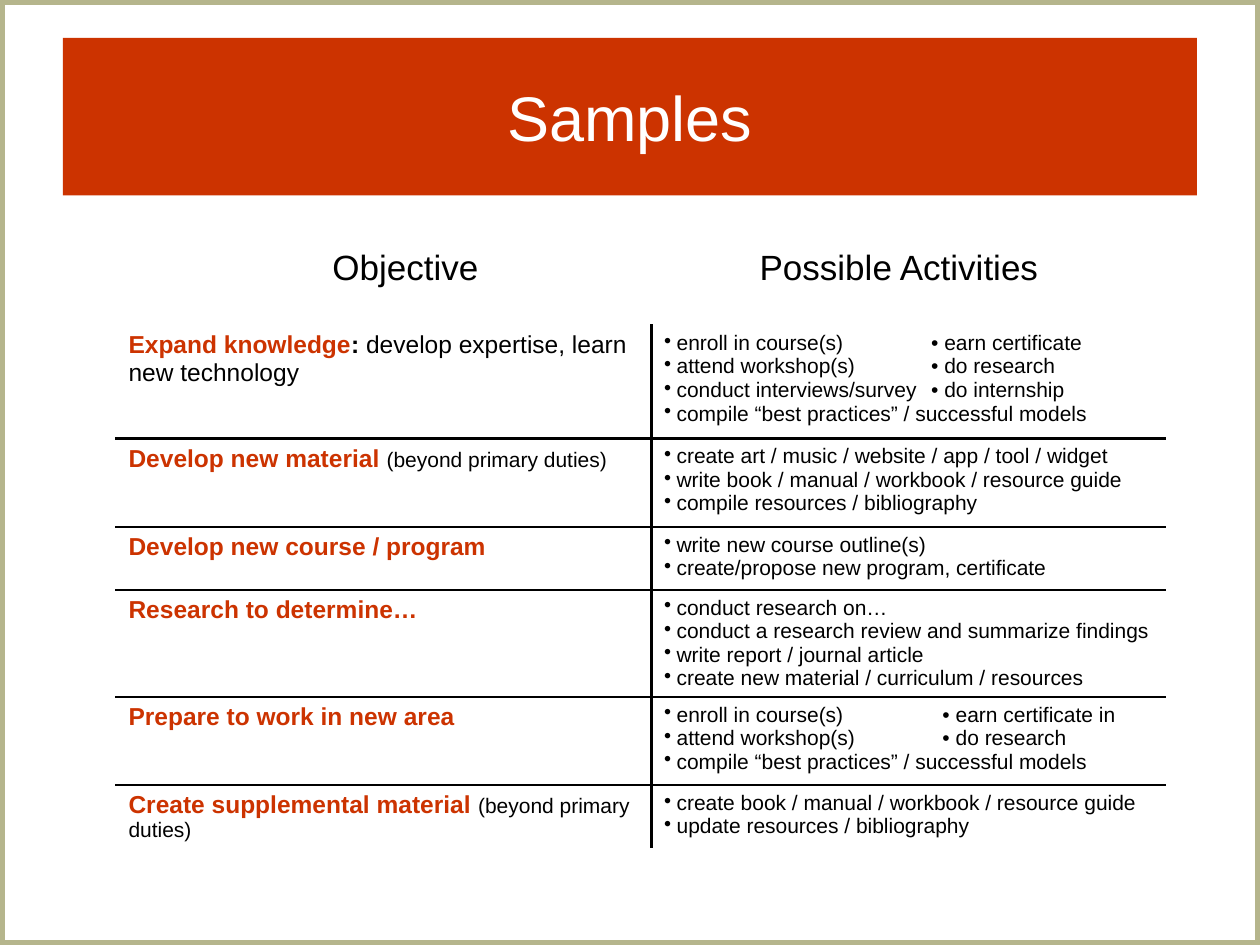
from dataclasses import dataclass

from lxml.etree import SubElement
from pptx import Presentation
from pptx.dml.color import RGBColor
from pptx.enum.shapes import MSO_SHAPE
from pptx.enum.text import MSO_ANCHOR, PP_ALIGN
from pptx.oxml.ns import qn
from pptx.util import Inches, Pt


@dataclass(frozen=True)
class Theme:
    """Colours, font and type sizes of the slide."""
    red: str = "CC3300"
    black: str = "000000"
    white: str = "FFFFFF"
    olive: str = "B5B58C"
    font: str = "Arial"
    title: int = 36
    head: int = 20
    goal: int = 14
    small: int = 12
    rule: float = 1.5
    frame: int = 6


LOOK = Theme()
BOLD = {"size": LOOK.goal, "color": LOOK.red, "bold": True}
DARK = {**BOLD, "color": LOOK.black}
BODY = {"size": LOOK.goal}
NOTE = {"size": LOOK.small}

ROWS = [
    (0.9, 2.12,
     [("Expand knowledge", BOLD), (": ", DARK),
      ("develop expertise, learn new technology", BODY)],
     ["enroll in course(s)\t• earn certificate",
      "attend workshop(s)\t• do research",
      "conduct interviews/survey\t• do internship",
      "compile “best practices” / successful models"]),
    (0.7, None,
     [("Develop new material ", BOLD), ("(beyond primary duties)", NOTE)],
     ["create art / music / website / app / tool / widget",
      "write book / manual / workbook / resource guide",
      "compile resources / bibliography"]),
    (0.5, None,
     [("Develop new course / program", BOLD)],
     ["write new course outline(s)",
      "create/propose new program, certificate"]),
    (0.85, None,
     [("Research to determine…", BOLD)],
     ["conduct research on…",
      "conduct a research review and summarize findings",
      "write report / journal article",
      "create new material / curriculum / resources"]),
    (0.7, 2.21,
     [("Prepare to work in new area", BOLD)],
     ["enroll in course(s)\t• earn certificate in",
      "attend workshop(s)\t• do research",
      "compile “best practices” / successful models"]),
    (0.5, None,
     [("Create supplemental material ", BOLD),
      ("(beyond primary duties)", NOTE)],
     ["create book / manual / workbook / resource guide",
      "update resources / bibliography"]),
]


def write(para, text, size, color=LOOK.black, bold=False):
    """Add a styled run to a paragraph."""
    run = para.add_run()
    run.text = text
    run.font.color.rgb = RGBColor.from_string(color)
    form = {"name": LOOK.font, "size": Pt(size), "bold": bold}
    for key, value in form.items():
        setattr(run.font, key, value)


def set_tabs(para, stops):
    """Give a paragraph left tab stops, in inches."""
    tabs = SubElement(para._p.get_or_add_pPr(), qn("a:tabLst"))
    for stop in stops:
        SubElement(tabs, qn("a:tab"), pos=str(Inches(stop)), algn="l")


def set_bullet(para, indent):
    """Give a paragraph a hanging round bullet."""
    props = para._p.get_or_add_pPr()
    props.set("marL", str(Inches(indent)))
    props.set("indent", str(-Inches(indent)))
    SubElement(props, qn("a:buChar"), char="•")


def rule_cell(cell, sides):
    """Draw rules on the given sides of a cell and clear its fill."""
    props = cell._tc.get_or_add_tcPr()
    for side in sides:
        line = SubElement(props, qn("a:ln" + side), w=str(Pt(LOOK.rule)))
        fill = SubElement(line, qn("a:solidFill"))
        SubElement(fill, qn("a:srgbClr"), val=LOOK.black)
    cell.fill.background()


def add_box(slide, box):
    """Add a plain rectangle without shadow."""
    shape = slide.shapes.add_shape(MSO_SHAPE.RECTANGLE, *map(Inches, box))
    shape.shadow.inherit = False
    return shape


def add_frame(slide, box):
    """Outline the slide."""
    frame = add_box(slide, box)
    frame.fill.background()
    frame.line.color.rgb = RGBColor.from_string(LOOK.olive)
    frame.line.width = Pt(LOOK.frame)


def add_title(slide, box, text):
    """Add the title band."""
    band = add_box(slide, box)
    band.fill.solid()
    band.fill.fore_color.rgb = RGBColor.from_string(LOOK.red)
    band.line.fill.background()
    band.text_frame.vertical_anchor = MSO_ANCHOR.MIDDLE
    para = band.text_frame.paragraphs[0]
    para.alignment = PP_ALIGN.CENTER
    write(para, text, LOOK.title, LOOK.white)


def add_heads(slide, box, names, stops):
    """Set the column heads on tab stops in one line."""
    frame = slide.shapes.add_textbox(*map(Inches, box)).text_frame
    frame.word_wrap = True
    para = frame.paragraphs[0]
    set_tabs(para, stops)
    write(para, "".join("\t" + name for name in names), LOOK.head)


def fill_acts(cell, acts, stop):
    """List the activities of one objective."""
    frame = cell.text_frame
    for num, act in enumerate(acts):
        para = frame.add_paragraph() if num else frame.paragraphs[0]
        set_bullet(para, 0.1)
        if "\t" in act:
            set_tabs(para, [stop])
        write(para, act, LOOK.small)


def add_grid(slide, box, widths, rows):
    """Add the table of objectives and activities with inner rules."""
    table = slide.shapes.add_table(
        len(rows), len(widths), *map(Inches, box)).table
    for key in ("first_row", "horz_banding"):
        setattr(table, key, False)
    for col, width in zip(table.columns, widths):
        col.width = Inches(width)
    for num, (height, stop, goal, acts) in enumerate(rows):
        table.rows[num].height = Inches(height)
        left, right = table.rows[num].cells
        for text, form in goal:
            write(left.text_frame.paragraphs[0], text, **form)
        fill_acts(right, acts, stop)
        sides = ("T" if num else "") + ("B" if num < len(rows) - 1 else "")
        rule_cell(left, "R" + sides)
        rule_cell(right, "L" + sides)


def main():
    """Build and save the slide."""
    deck = Presentation()
    deck.slide_width, deck.slide_height = Inches(10), Inches(7.5)
    slide = deck.slides.add_slide(deck.slide_layouts[6])
    add_frame(slide, (0, 0, 10, 7.5))
    add_title(slide, (0.5, 0.3, 9, 1.25), "Samples")
    add_grid(slide, (0.92, 2.58, 8.33, 4.15), (4.25, 4.08), ROWS)
    add_heads(slide, (2.08, 1.9, 6.42, 0.44),
              ("Objective", "Possible Activities"), (0.46, 3.85))
    deck.save("out.pptx")


if __name__ == "__main__":
    main()
